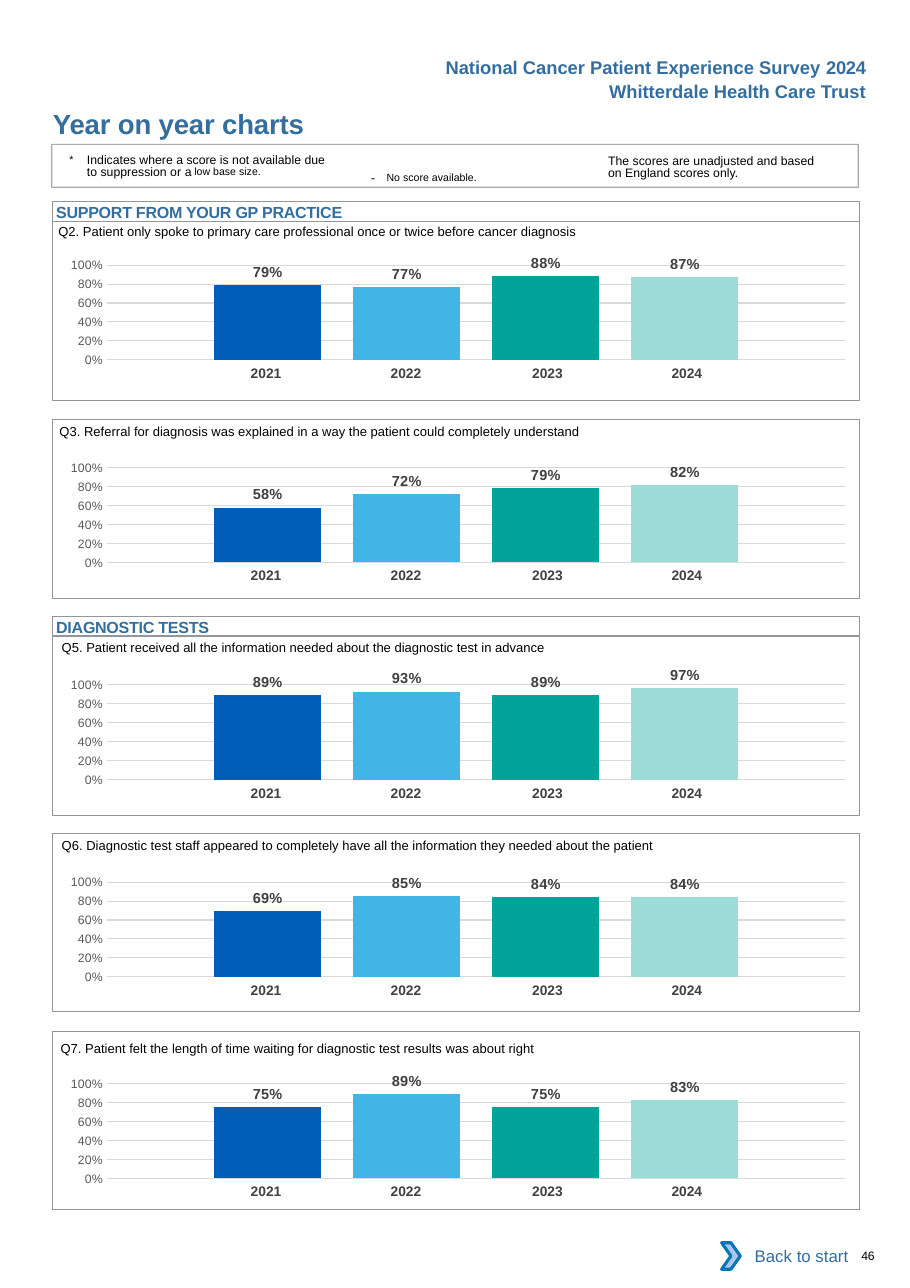
from lxml import etree
from pptx import Presentation
from pptx import util as u
from pptx.chart.data import CategoryChartData
from pptx.dml.color import RGBColor
from pptx.enum import chart as ch, shapes, text
from pptx.oxml import parse_xml
from pptx.oxml.ns import qn

BLUE, GREY, BLACK, DARK = "336E9F", "939598", "000000", "404040"
LEFT, WIDE, TALL = 0.48, 7.32, 1.62
BARS = {"2021": "005EB8", "2022": "41B6E6", "2023": "00A499", "2024": "9CDCD7"}
NO_GRID = "{2D5ABB26-0587-4C30-8999-92F81FD0307C}"
C_NS = "http://schemas.openxmlformats.org/drawingml/2006/chart"
PLOT = {"x": 0.08, "y": 0.145, "w": 0.915, "h": 0.666}
RIGHT, CENTER = text.PP_ALIGN.RIGHT, text.PP_ALIGN.CENTER

# panel top, question left, question top, chart top (last two from panel top)
PANELS = [
    (2.01, 0.52, -0.07, 0.21, [0.79, 0.77, 0.88, 0.87],
     "Q2. Patient only spoke to primary care professional once or twice before cancer diagnosis"),
    (3.81, 0.53, -0.06, 0.25, [0.58, 0.72, 0.79, 0.82],
     "Q3. Referral for diagnosis was explained in a way the patient could completely understand"),
    (5.78, 0.55, -0.07, 0.25, [0.89, 0.93, 0.89, 0.97],
     "Q5. Patient received all the information needed about the diagnostic test in advance"),
    (7.56, 0.55, -0.05, 0.26, [0.69, 0.85, 0.84, 0.84],
     "Q6. Diagnostic test staff appeared to completely have all the information they needed "
     "about the patient"),
    (9.36, 0.54, -0.01, 0.29, [0.75, 0.89, 0.75, 0.83],
     "Q7. Patient felt the length of time waiting for diagnostic test results was about right"),
]


def rgb(code):
    return RGBColor.from_string(code)


def place(*box):
    return [u.Inches(v) for v in box]


def style(font, size, color=BLACK, bold=False, name="Arial"):
    for key, val in {"size": u.Pt(size), "bold": bold, "name": name}.items():
        setattr(font, key, val)
    font.color.rgb = rgb(color)


def write(frame, runs, color=BLACK, bold=False, align=text.PP_ALIGN.LEFT,
          pad=(0, 0, 0, 0), anchor=text.MSO_ANCHOR.TOP):
    """Fill a frame with runs of (words, size, spacing, baseline); the last two may be left out."""
    names = ("margin_left", "margin_top", "margin_right", "margin_bottom")
    for key, val in zip(names, place(*pad)):
        setattr(frame, key, val)
    frame.word_wrap, frame.vertical_anchor = True, anchor
    par = frame.paragraphs[0]
    par.alignment = align
    for words, size, *more in runs:
        run = par.add_run()
        run.text = words
        style(run.font, size, color, bold)
        for key, val in zip(("spc", "baseline"), more):
            if val:
                run.font._element.set(key, str(val))
    return par


def label(slide, box, runs, **opts):
    return write(slide.shapes.add_textbox(*place(*box)).text_frame, runs, **opts)


def shape(slide, kind, box, fill=None, line=None, width=0.5):
    part = slide.shapes.add_shape(kind, *place(*box))
    part.shadow.inherit = False
    if fill:
        part.fill.solid()
        part.fill.fore_color.rgb = rgb(fill)
    else:
        part.fill.background()
    if line:
        part.line.color.rgb = rgb(line)
        part.line.width = u.Pt(width)
    else:
        part.line.fill.background()
    return part


def frame(slide, box, width=0.5):
    return shape(slide, shapes.MSO_SHAPE.RECTANGLE, box, line=GREY, width=width)


def header(slide):
    pad = (0.1, 0.05, 0.1, 0.05)
    for top, runs in ((0.46, [("National Cancer Patient Experience Survey ", 12), ("2024", 12, -20)]),
                      (0.68, [("Whitterdale Health Care Trust", 12)])):
        label(slide, (3.92, top, 4.04, 0.3), runs, color=BLUE, bold=True, align=RIGHT, pad=pad)
    title = slide.shapes.title
    for key, val in zip(("left", "top", "width", "height"), place(0.47, 0.97, 4.5, 0.3)):
        setattr(title, key, val)
    write(title.text_frame, [("Year on year charts", 18, -10)], color=BLUE, bold=True,
          pad=(0.01, 0, 0, 0))


def notice(slide, left, top):
    """Box that explains the marks used with the scores."""
    pad = (0, 0.03, 0, 0)
    star = label(slide, (left + 0.16, top + 0.07, 2.4, 0.3), [
        ("*\t", 12, 0, 3000), ("Indicates where a score is not available due to suppression or ", 8),
        ("a ", 8, -50), ("low base size.", 12, 0, 7000)], pad=pad)
    props = star._p.get_or_add_pPr()
    props.set("marL", str(u.Inches(0.16)))
    props.set("indent", str(-u.Inches(0.16)))
    scores = label(slide, (left + 5.05, top + 0.07, 1.98, 0.3),
                   [("The scores are unadjusted and based on England scores only.", 8)], pad=pad)
    for par in (star, scores):
        par.line_spacing = u.Pt(8.1)
    label(slide, (left + 2.8, top + 0.13, 1.83, 0.24),
          [("- ", 8, 260), ("No score available.", 12, 0, 3000)], pad=(0.1, 0.05, 0.1, 0.05))
    box = frame(slide, (left, top, WIDE, 0.39), 0.75)
    tint = box.line._ln.find(".//" + qn("a:srgbClr"))
    etree.SubElement(tint, qn("a:alpha")).set("val", "80000")


def section(slide, top, name):
    bar = frame(slide, (LEFT, top, WIDE, 0.18))
    write(bar.text_frame, [(name, 10.5, -15)], color=BLUE, bold=True, pad=(0.03, 0.01, 0, 0))


def bars(slide, box, scores):
    data = CategoryChartData(number_format="0%")
    data.categories = ["1"]
    for num, score in enumerate(scores, 1):
        data.add_series(f"Series {num}", [score])
    chart = slide.shapes.add_chart(ch.XL_CHART_TYPE.COLUMN_CLUSTERED, *place(*box), data).chart
    style(chart.font, 10, name="Calibri")
    chart.has_legend = chart.has_title = False
    chart.category_axis.visible = False
    axis = chart.value_axis
    for key, val in {"minimum_scale": 0, "maximum_scale": 1, "major_unit": 0.2,
                     "has_major_gridlines": True,
                     "major_tick_mark": ch.XL_TICK_MARK.NONE}.items():
        setattr(axis, key, val)
    axis.format.line.fill.background()
    grid = axis.major_gridlines.format.line
    grid.color.rgb, grid.width = rgb("D9D9D9"), u.Pt(0.75)
    style(axis.tick_labels.font, 8, "595959")
    plot = chart.plots[0]
    plot.gap_width, plot.overlap, plot.vary_by_categories = 200, -30, False
    for series, color in zip(plot.series, BARS.values()):
        series.format.fill.solid()
        series.format.fill.fore_color.rgb = rgb(color)
        marks = series.data_labels
        marks.show_value, marks.position = True, ch.XL_LABEL_POSITION.OUTSIDE_END
        style(marks.font, 9.5, DARK, True)
    for part in (axis.tick_labels, *(s.data_labels for s in plot.series)):
        part.number_format, part.number_format_is_linked = "0%", False
    modes = '<c:layoutTarget val="inner"/><c:xMode val="edge"/><c:yMode val="edge"/>'
    sizes = "".join(f'<c:{key} val="{val}"/>' for key, val in PLOT.items())
    area = chart._chartSpace.chart.plotArea
    for old in area.findall(qn("c:layout")):
        area.remove(old)
    area.insert(0, parse_xml(f'<c:layout xmlns:c="{C_NS}"><c:manualLayout>{modes}{sizes}'
                             '</c:manualLayout></c:layout>'))


def years(slide, left, top):
    table = slide.shapes.add_table(1, 4, *place(left, top, 5.15, 0.27)).table
    table.first_row = table.horz_banding = False
    table._tbl.tblPr.find(qn("a:tableStyleId")).text = NO_GRID
    for num, (year, wide, pad) in enumerate(zip(BARS, (1.27, 1.27, 1.34, 1.27), (0, 0, 0.04, 0.12))):
        table.columns[num].width = u.Inches(wide)
        cell = table.cell(0, num)
        cell.fill.background()
        for key, val in zip(("margin_left", "margin_top", "margin_right", "margin_bottom"),
                            place(0.1, 0.05, pad, 0.05)):
            setattr(cell, key, val)
        par = cell.text_frame.paragraphs[0]
        par.text, par.alignment = year, CENTER
        style(par.runs[0].font, 9, "414042", True)


def panel(slide, top, ask_left, ask_top, chart_top, scores, ask):
    label(slide, (ask_left, top + ask_top, 7.21, 0.24), [(ask, 8.5)], pad=(0.01, 0.09, 0, 0))
    bars(slide, (LEFT - 0.09, top + chart_top, WIDE, 1.29), scores)
    years(slide, LEFT + 1.25, top + chart_top + 1.05)
    frame(slide, (LEFT, top, WIDE, TALL))


def footer(slide, left, top):
    back = shape(slide, shapes.MSO_SHAPE.RECTANGLE, (left + 0.07, top, 1.18, 0.42), fill="FFFFFF")
    write(back.text_frame, [("Back to start", 11)], color=BLUE, align=RIGHT,
          pad=(0.1, 0.05, 0.1, 0.05), anchor=text.MSO_ANCHOR.MIDDLE)
    shape(slide, shapes.MSO_SHAPE.CHEVRON, (left, top + 0.09, 0.17, 0.24), "A8C7E9", "0A74BB", 2)
    label(slide, (left + 1.17, top + 0.14, 0.51, 0.13), [("46", 8, -20)], pad=(0.1, 0, 0, 0))


def main():
    deck = Presentation()
    deck.slide_width, deck.slide_height = place(8.26, 11.69)
    slide = deck.slides.add_slide(deck.slide_layouts[5])
    header(slide)
    notice(slide, 0.47, 1.31)
    section(slide, 1.83, "SUPPORT FROM YOUR GP PRACTICE")
    section(slide, 5.59, "DIAGNOSTIC TESTS")
    for item in PANELS:
        panel(slide, *item)
    footer(slide, 6.55, 11.19)
    deck.save("out.pptx")


if __name__ == "__main__":
    main()
